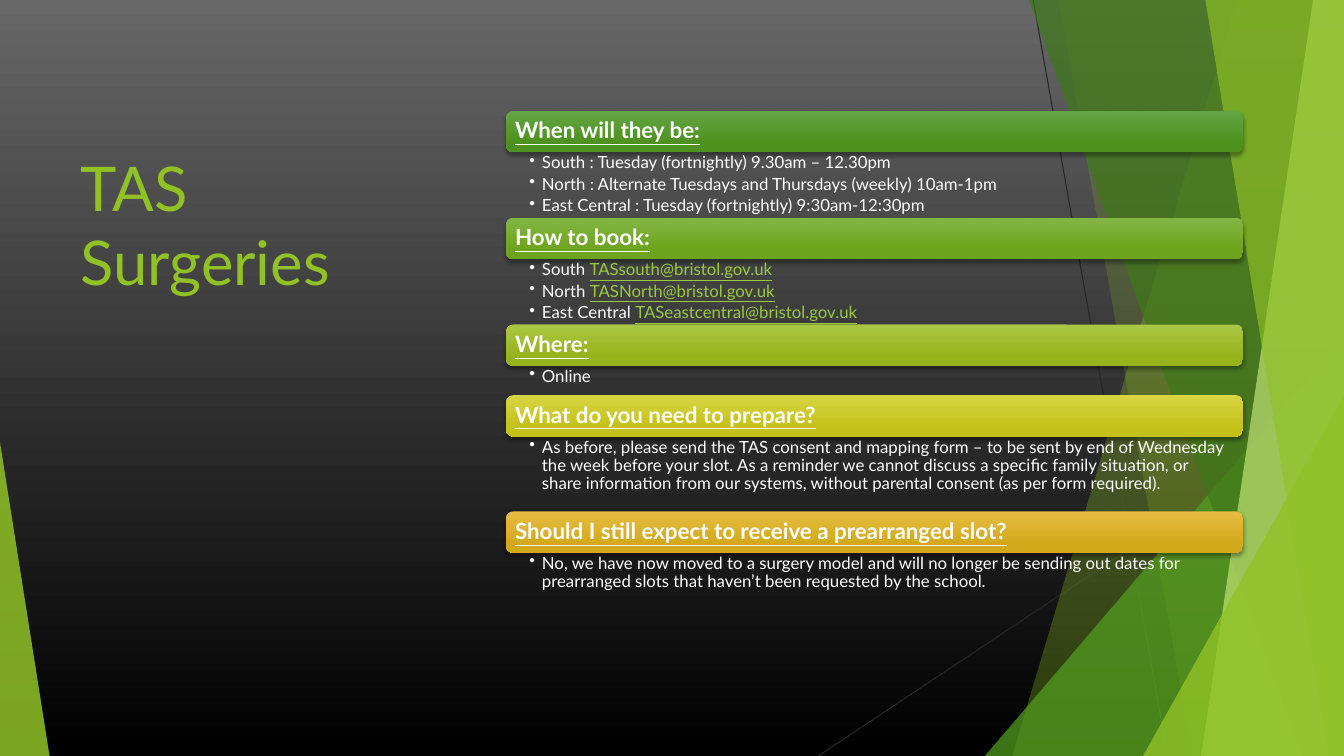
import pptx
import pptx.dml.color
import pptx.enum.shapes
import pptx.enum.text
import pptx.oxml
import pptx.oxml.ns
import pptx.util
from lxml import etree

Pt = pptx.util.Pt
qn = pptx.oxml.ns.qn
KINDS = pptx.enum.shapes.MSO_SHAPE
ANCHOR = pptx.enum.text.MSO_ANCHOR
ALIGN = pptx.enum.text.PP_ALIGN
FONT = "Lato"
WIDE, HIGH = 960, 540
LEFT, SPAN, BAR = 361.5, 526.3, 29.5  # list column and heading height

COLORS = {
    "top": "676767", "base": "000000", "line": "262626", "white": "FFFFFF",
    "lime": "90C226", "green": "54A021", "dark": "3F7819", "pale": "C0E474",
    "link": "99CA3C",
}

# Slanted bands: top x, bottom x, color, opacity in percent
BANDS = [(884, 723, "lime", 30), (756, 852, "lime", 20)]
FRONT = [(735, 929.5, "dark", 70), (938, 858, "pale", 70), (861, 949, "lime", 65)]

# Heading, upper and lower bar color, body height, bullets (text, mail)
PARTS = [
    ("When will they be:", "63A545", "4D921E", 46.8, [
        ("South : Tuesday (fortnightly) 9.30am – 12.30pm", ""),
        ("North : Alternate Tuesdays and Thursdays (weekly) 10am-1pm", ""),
        ("East Central : Tuesday (fortnightly) 9:30am-12:30pm", "")]),
    ("How to book:", "82B644", "6EA31D", 46.8, [
        ("South ", "TASsouth@bristol.gov.uk"),
        ("North ", "TASNorth@bristol.gov.uk"),
        ("East Central ", "TASeastcentral@bristol.gov.uk")]),
    ("Where:", "AAC744", "97B31C", 21, [("Online", "")]),
    ("What do you need to prepare?", "D8D543", "C4C11A", 53.5, [
        ("As before, please send the TAS consent and mapping form – to be sent by "
         "end of Wednesday the week before your slot. As a reminder we cannot "
         "discuss a specific family situation, or share information from our "
         "systems, without parental consent (as per form required).", "")]),
    ("Should I still expect to receive a prearranged slot?", "E7BC43", "D2A91B", 28.8, [
        ("No, we have now moved to a surgery model and will no longer be sending "
         "out dates for prearranged slots that haven’t been requested by the "
         "school.", "")]),
]


def rgb(name):
    return pptx.dml.color.RGBColor.from_string(COLORS.get(name, name))


def shade(fill, upper, lower, stop=1.0):
    """Fill from top to bottom."""
    fill.gradient()
    fill.gradient_angle = 270
    for mark, name, place in zip(fill.gradient_stops, (upper, lower), (0, stop)):
        mark.color.rgb = rgb(name)
        mark.position = place


def tint(shape, name, alpha):
    """Give a flat, see-through fill without outline."""
    shape.shadow.inherit = False
    shape.line.fill.background()
    shape.fill.solid()
    shape.fill.fore_color.rgb = rgb(name)
    color = shape._element.spPr.find(qn("a:solidFill")).find(qn("a:srgbClr"))
    etree.SubElement(color, qn("a:alpha"), val=str(alpha * 1000))


def add_line(slide, *ends):
    line = slide.shapes.add_connector(
        pptx.enum.shapes.MSO_CONNECTOR.STRAIGHT, *map(Pt, ends))
    line.line.color.rgb = rgb("line")
    line.line.width = Pt(0.75)
    etree.SubElement(line._element.spPr, qn("a:effectLst"))


def add_band(slide, top, base, name, alpha):
    path = slide.shapes.build_freeform(top, 0, scale=Pt(1))
    path.add_line_segments([(WIDE, 0), (WIDE, HIGH), (base, HIGH)], close=True)
    tint(path.convert_to_shape(), name, alpha)


def add_wedge(slide, left, top, width, peak, name, alpha):
    """Triangle standing on the slide's lower edge."""
    wedge = slide.shapes.add_shape(
        KINDS.ISOSCELES_TRIANGLE, Pt(left), Pt(top), Pt(width), Pt(HIGH - top))
    wedge.adjustments[0] = peak
    tint(wedge, name, alpha)


def set_font(font, size, name="white"):
    font.name = FONT
    font.size = Pt(size)
    font.color.rgb = rgb(name)


def set_frame(frame, left, right, edge, anchor):
    frame.word_wrap = True
    frame.margin_left, frame.margin_right = Pt(left), Pt(right)
    frame.margin_top = frame.margin_bottom = Pt(edge)
    frame.vertical_anchor = anchor


def add_head(slide, top, text, upper, lower):
    bar = slide.shapes.add_shape(
        KINDS.ROUNDED_RECTANGLE, Pt(LEFT), Pt(top), Pt(SPAN), Pt(BAR))
    shade(bar.fill, upper, lower, 0.78)
    bar.line.fill.background()
    # Soft shadow below the bar
    bar.shadow.inherit = False
    glow = etree.SubElement(
        bar._element.spPr.find(qn("a:effectLst")), qn("a:outerShdw"),
        blurRad=str(Pt(3)), dist=str(Pt(2)), dir="5400000", rotWithShape="0")
    color = etree.SubElement(glow, qn("a:srgbClr"), val=COLORS["base"])
    etree.SubElement(color, qn("a:alpha"), val="35000")
    set_frame(bar.text_frame, 5, 5, 5, ANCHOR.MIDDLE)
    para = bar.text_frame.paragraphs[0]
    para.text = text
    para.alignment = ALIGN.LEFT
    para.line_spacing = 0.9
    set_font(para.font, 16)
    para.font.bold = para.font.underline = True


def add_list(slide, top, height, items):
    box = slide.shapes.add_textbox(Pt(LEFT), Pt(top), Pt(SPAN), Pt(height))
    frame = box.text_frame
    set_frame(frame, 16.6, 8.6, 1.5, ANCHOR.TOP)
    for num, (text, mail) in enumerate(items):
        para = frame.add_paragraph() if num else frame.paragraphs[0]
        para.level = 1
        para.line_spacing = 0.9
        para.space_after = Pt(2.4)
        props = para._p.get_or_add_pPr()
        props.set("marL", str(Pt(9)))
        props.set("indent", str(Pt(-9)))
        etree.SubElement(props, qn("a:buChar"), char="•")
        set_font(para.font, 12)
        para.add_run().text = text
        if mail:
            run = para.add_run()
            run.text = mail
            run.font.color.rgb = rgb("link")
            run.font.underline = True


def set_title(slide, text):
    title = slide.shapes.title
    title.left, title.top = Pt(50.4), Pt(103.7)
    title.width, title.height = Pt(224), Pt(289.4)
    set_frame(title.text_frame, 7.2, 7.2, 3.6, ANCHOR.TOP)
    para = title.text_frame.paragraphs[0]
    para.text = text
    para.alignment = ALIGN.LEFT
    para.line_spacing = 1.0
    set_font(para.font, 44, "lime")


def main():
    deck = pptx.Presentation()
    deck.slide_width, deck.slide_height = Pt(WIDE), Pt(HIGH)
    slide = deck.slides.add_slide(deck.slide_layouts[5])
    shade(slide.background.fill, "top", "base")

    # Backdrop
    add_line(slide, 738, 0, 834, HIGH)
    add_line(slide, WIDE, 290, 584.5, HIGH)
    for band in BANDS:
        add_band(slide, *band)
    add_wedge(slide, 703.5, 240, 256.5, 1, "green", 72)
    for band in FRONT:
        add_band(slide, *band)
    add_wedge(slide, 816.5, 283, 143.5, 1, "lime", 80)
    add_wedge(slide, 0, 316, 35.4, 0, "lime", 85)

    # Title and stacked parts
    set_title(slide, "TAS Surgeries")
    top = 79.2
    for text, upper, lower, height, items in PARTS:
        add_head(slide, top, text, upper, lower)
        add_list(slide, top + BAR, height, items)
        top += BAR + height

    deck.save("out.pptx")


if __name__ == "__main__":
    main()
